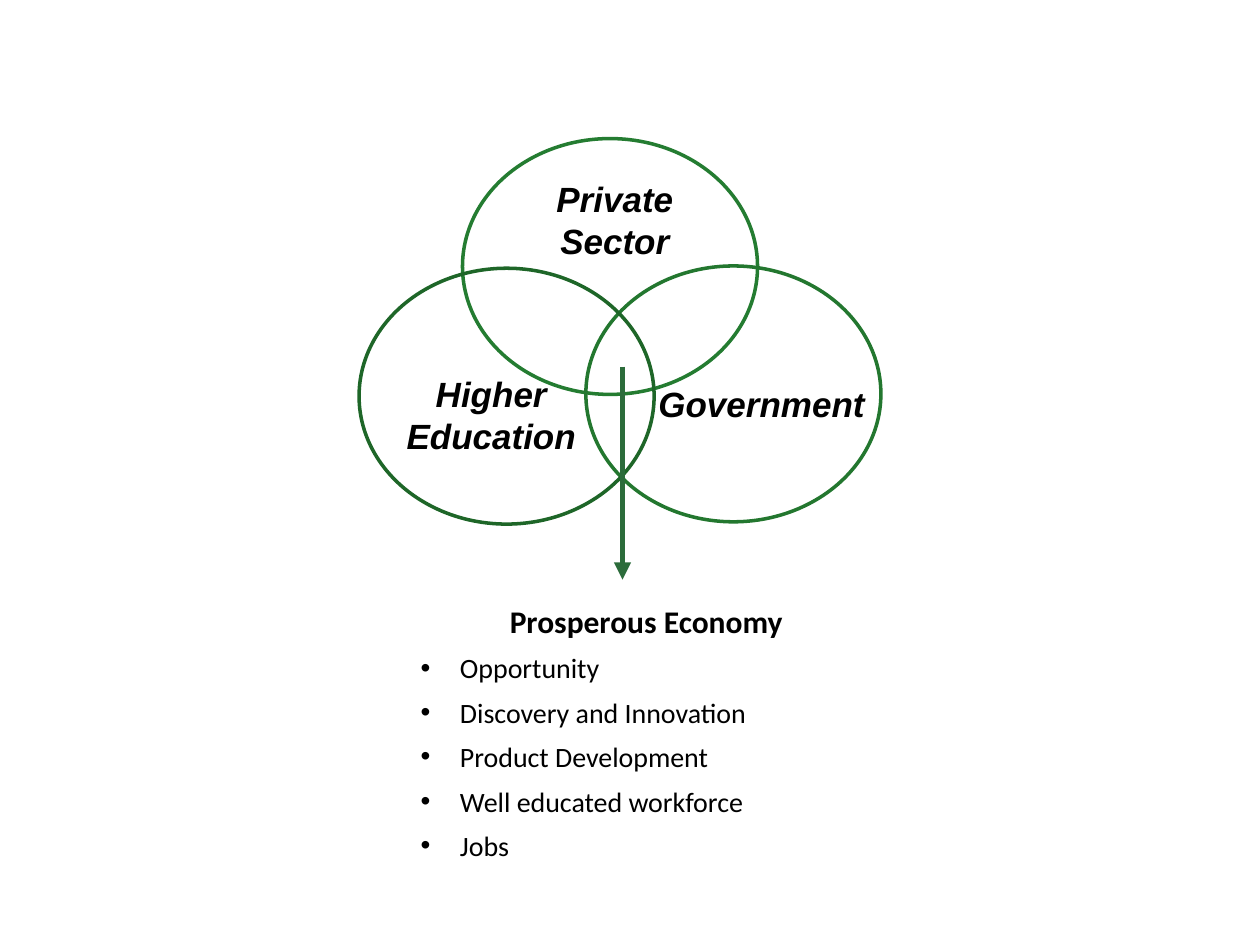
"""Build a slide of three overlapping sectors leading to a prosperous economy."""
from lxml import etree
from pptx import Presentation
from pptx.dml.color import RGBColor
from pptx.enum.shapes import MSO_CONNECTOR, MSO_SHAPE
from pptx.enum.text import PP_ALIGN
from pptx.oxml.ns import qn
from pptx.util import Pt

OVAL = MSO_SHAPE.OVAL
LINE = MSO_CONNECTOR.STRAIGHT
MID = PP_ALIGN.CENTER


def color(code):
    return RGBColor.from_string(code)


def style(para, face, size, bold=False, slant=False):
    font = para.font
    font.name, font.size = face, Pt(size)
    font.bold, font.italic = bold, slant
    font.color.rgb = color("000000")


deck = Presentation()
deck.slide_width, deck.slide_height = Pt(720), Pt(540)
slide = deck.slides.add_slide(deck.slide_layouts[6])
shapes = slide.shapes

box = shapes.add_textbox(Pt(233.3), Pt(344.9), Pt(272), Pt(161.3))
frame = box.text_frame
frame.word_wrap = True
head = frame.paragraphs[0]
head.text = "Prosperous Economy"
head.alignment = MID
head.line_spacing = 0.8
style(head, "Calibri", 18, bold=True)

gains = ["Opportunity", "Discovery and Innovation", "Product Development",
         "Well educated workforce", "Jobs"]
for gain in gains:
    para = frame.add_paragraph()
    para.text = gain
    para.line_spacing = 0.8
    para.space_before = Pt(10)
    props = para._p.get_or_add_pPr()
    props.set("marL", str(Pt(22.5)))
    props.set("indent", str(-Pt(22.5)))
    etree.SubElement(props, qn("a:buFont")).set("typeface", "Arial")
    etree.SubElement(props, qn("a:buChar")).set("char", "•")
    style(para, "Calibri", 16)

rings = [(264.3, 79.2, "247C31"), (334.8, 152, "23772F"), (205.2, 153.3, "1E6628")]
for left, top, code in rings:
    ring = shapes.add_shape(OVAL, Pt(left), Pt(top), Pt(168.6), Pt(146.2))
    ring.shadow.inherit = False
    ring.fill.background()
    ring.line.color.rgb = color(code)
    ring.line.width = Pt(2)

labels = [("Higher Education", 210.2, 209.5, 141.1, 55.4),
          ("Government", 365, 215.3, 140.4, 31.7),
          ("Private Sector", 306, 97.9, 90.7, 55.4)]
for text, *area in labels:
    box = shapes.add_textbox(*map(Pt, area))
    box.text_frame.word_wrap = True
    para = box.text_frame.paragraphs[0]
    para.text = text
    para.alignment = MID
    style(para, "Arial", 20, bold=True, slant=True)

arrow = shapes.add_connector(LINE, Pt(355.7), Pt(209.5), Pt(355.7), Pt(331.2))
arrow.line.color.rgb = color("2C6C3B")
arrow.line.width = Pt(3.25)
etree.SubElement(arrow.line._get_or_add_ln(), qn("a:tailEnd")).set("type", "triangle")
etree.SubElement(arrow._element.spPr, qn("a:effectLst"))

deck.save("out.pptx")
